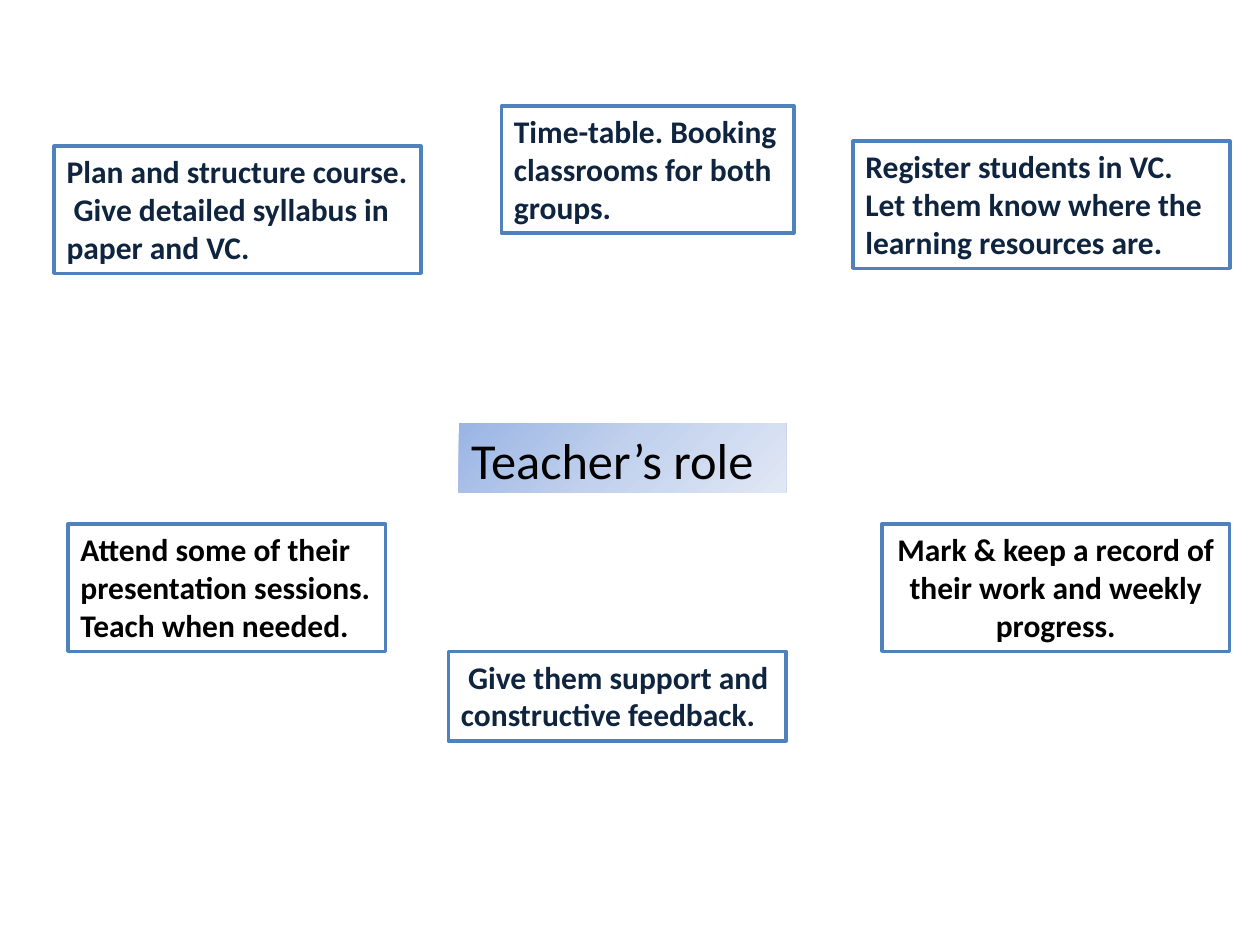
from copy import deepcopy

from pptx import Presentation
from pptx.dml.color import RGBColor
from pptx.enum import shapes, text
from pptx.util import Inches, Pt

COLORS = {
    "white": "FFFFFF",
    "border": "4F81BD",
    "navy": "0F243E",
    "black": "000000",
}
ROLE_GRADIENT = [(0, "9AB5E4"), (0.5, "C2D1ED"), (1, "E1E8F5")]
LEFT, CENTER = text.PP_ALIGN.LEFT, text.PP_ALIGN.CENTER

DUTIES = [
    ((0.43, 1.16, 2.91, 1.01), "navy", LEFT,
     "Plan and structure course.  Give detailed syllabus in paper and VC."),
    ((3.98, 0.84, 2.32, 1.01), "navy", LEFT,
     "Time-table. Booking classrooms for both groups."),
    ((6.77, 1.12, 2.99, 1.01), "navy", LEFT,
     "Register students in VC. Let them know where the learning resources are."),
    ((7, 4.16, 2.76, 1.01), "black", CENTER,
     "Mark & keep a record of their work and weekly progress."),
    ((3.56, 5.17, 2.68, 0.71), "navy", LEFT,
     " Give them support and constructive feedback."),
    ((0.54, 4.16, 2.52, 1.01), "black", LEFT,
     "Attend some of their presentation sessions. Teach when needed."),
]


def rgb(name):
    """Return the named palette colour."""
    return RGBColor.from_string(COLORS[name])


def add_panel(slide, box):
    """Add a plain rectangle without shadow in the given box."""
    panel = slide.shapes.add_shape(
        shapes.MSO_SHAPE.RECTANGLE, *(Inches(length) for length in box))
    panel.shadow.inherit = False
    return panel


def write(panel, wording, *, size=18, bold=False, color="black", align=LEFT, before=0):
    """Write one formatted paragraph into a panel."""
    frame = panel.text_frame
    frame.word_wrap = True
    frame.vertical_anchor = text.MSO_ANCHOR.TOP
    paragraph = frame.paragraphs[0]
    paragraph.alignment = align
    paragraph.space_before = Pt(before)
    run = paragraph.add_run()
    run.text = wording
    run.font.name = "Calibri"
    run.font.size = Pt(size)
    run.font.bold = bold
    run.font.color.rgb = rgb(color)


def add_duty(slide, box, color, align, wording):
    """Add one bordered box that states a duty of the teacher."""
    duty = add_panel(slide, box)
    duty.fill.solid()
    duty.fill.fore_color.rgb = rgb("white")
    duty.line.color.rgb = rgb("border")
    duty.line.width = Pt(2)
    write(duty, wording, bold=True, color=color, align=align)
    duty.text_frame.auto_size = text.MSO_AUTO_SIZE.SHAPE_TO_FIT_TEXT


def add_role(slide, box):
    """Add the central gradient label."""
    role = add_panel(slide, box)
    role.line.fill.background()
    role.fill.gradient()
    role.fill.gradient_angle = 315
    stop_list = role.fill._fill._gradFill.gsLst
    stop_list.append(deepcopy(stop_list[-1]))
    for stop, (position, color) in zip(role.fill.gradient_stops, ROLE_GRADIENT):
        stop.position = position
        stop.color.rgb = RGBColor.from_string(color)
    write(role, "Teacher’s role", size=28.8, before=5.76)


def main():
    """Build and save the slide."""
    deck = Presentation()
    deck.slide_width, deck.slide_height = Inches(10), Inches(7.5)
    slide = deck.slides.add_slide(deck.slide_layouts[6])
    for duty in DUTIES:
        add_duty(slide, *duty)
    add_role(slide, (3.64, 3.36, 2.6, 0.55))
    deck.save("out.pptx")


if __name__ == "__main__":
    main()
